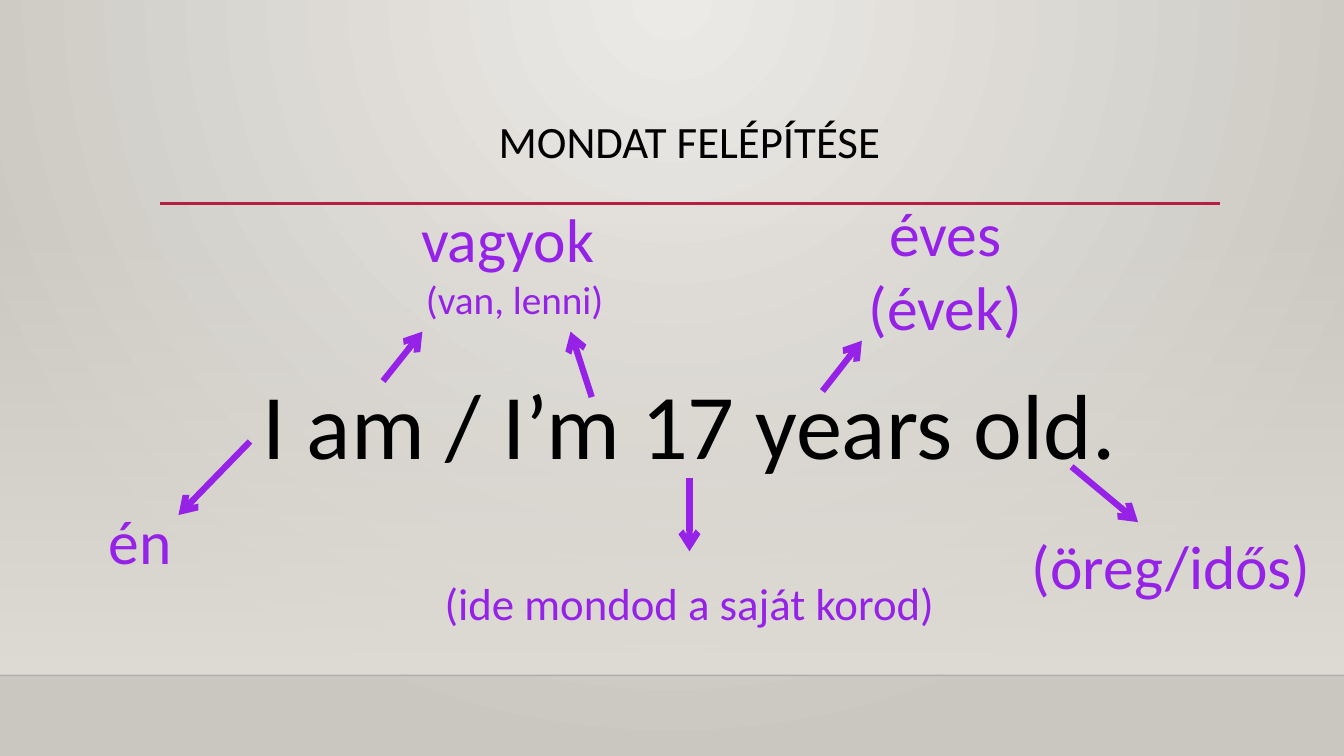
from dataclasses import dataclass

from lxml import etree
from pptx import Presentation
from pptx.dml.color import RGBColor
from pptx.enum.shapes import MSO_CONNECTOR, MSO_SHAPE
from pptx.enum.text import MSO_ANCHOR, PP_ALIGN
from pptx.oxml.ns import qn
from pptx.util import Inches, Pt

STRAIGHT = MSO_CONNECTOR.STRAIGHT
RECTANGLE = MSO_SHAPE.RECTANGLE
MIDDLE = MSO_ANCHOR.MIDDLE
CENTER = PP_ALIGN.CENTER
TITLE_ONLY = 5
WIDTH, HEIGHT = Inches(13.333), Inches(7.5)


@dataclass(frozen=True)
class Theme:
    font: str = "Calibri"
    ink: str = "000000"
    note: str = "9622E7"
    rule: str = "B71E42"
    floor: str = "000001"
    glow: str = "ECEAE7"
    edge: str = "CAC7C1"
    wall: str = "DFDBD5"
    sentence_size: int = 66
    word_size: int = 44
    title_size: int = 32
    hint_size: int = 28
    arrow_width: float = 4.5


THEME = Theme()

# Boxes are left, top, width, height in percent of the slide.
TITLE_BOX = (11.93, 10.8, 78.75, 16.4)
SENTENCE_BOX = (11.93, 29.33, 78.75, 50.27)
WALL_BOX = (0, 29.47, 100, 59.87)
TRANSLATIONS = [
    ("én", (2.18, 65.87, 16.5, 11.2), [THEME.word_size]),
    ("vagyok \v(van, lenni)", (23.18, 25.87, 30.23, 17.47),
     [THEME.word_size, THEME.hint_size]),
    ("(ide mondod a saját korod)", (31.43, 75.47, 39.75, 8.53), [THEME.title_size]),
    ("éves (évek)", (60.3, 25.07, 20.1, 21.07), [THEME.word_size]),
    ("(öreg/idős)", (73.88, 69.07, 26.55, 11.2), [THEME.word_size]),
]
# Arrows run from the sentence to a translation: x, y, x, y in percent.
ARROWS = [
    (18.6, 58.4, 13.28, 68.13),
    (28.5, 50.4, 31.43, 43.87),
    (51.3, 63.2, 51.3, 72.93),
    (44.03, 52.53, 42.45, 43.87),
    (61.2, 51.73, 64.13, 45.07),
    (79.73, 61.73, 84.68, 69.07),
]


def share(values):
    """Turn alternating horizontal and vertical percentages into lengths."""
    return [round(value / 100 * (HEIGHT if index % 2 else WIDTH))
            for index, value in enumerate(values)]


def set_alpha(color_element, percent):
    etree.SubElement(color_element, qn("a:alpha"), val=str(percent * 1000))


def set_gradient(fill, colors):
    fill.gradient()
    for stop, color in zip(fill.gradient_stops, colors):
        stop.color.rgb = RGBColor.from_string(color)


def paint_background(slide):
    """Spread a round glow from the middle of the top edge."""
    set_gradient(slide.background.fill, (THEME.glow, THEME.edge))
    gradient = slide.element.xpath(".//p:bg//a:gradFill")[0]
    gradient.remove(gradient.find(qn("a:lin")))
    glow_path = etree.SubElement(gradient, qn("a:path"), path="circle")
    etree.SubElement(glow_path, qn("a:fillToRect"),
                     l="43000", t="0", r="43000", b="100000")


def add_wall(slide):
    wall = slide.shapes.add_shape(RECTANGLE, *share(WALL_BOX))
    wall.shadow.inherit = False
    wall.line.fill.background()
    set_gradient(wall.fill, (THEME.wall, THEME.wall))
    wall.fill.gradient_angle = 270
    set_alpha(wall.element.spPr.xpath(".//a:gs/a:srgbClr")[0], 0)


def add_line(slide, ends, color, width):
    line = slide.shapes.add_connector(STRAIGHT, *share(ends))
    line.line.color.rgb = RGBColor.from_string(color)
    line.line.width = Pt(width)
    etree.SubElement(line.element.spPr, qn("a:effectLst"))
    return line


def add_arrow(slide, ends):
    arrow = add_line(slide, ends, THEME.note, THEME.arrow_width)
    outline = arrow.element.spPr.find(qn("a:ln"))
    etree.SubElement(outline, qn("a:tailEnd"), type="arrow")


def write_text(shape, text, sizes, color, spacing=1.0):
    """Fill a shape with one centred paragraph, one size for each line."""
    frame = shape.text_frame
    frame.word_wrap = True
    frame.vertical_anchor = MIDDLE
    paragraph = frame.paragraphs[0]
    paragraph.text = text
    paragraph.alignment = CENTER
    paragraph.line_spacing = spacing
    for run, size in zip(paragraph.runs, sizes):
        run.font.name = THEME.font
        run.font.size = Pt(size)
        run.font.color.rgb = RGBColor.from_string(color)


def add_title(slide, text):
    title = slide.shapes.title
    title.left, title.top, title.width, title.height = share(TITLE_BOX)
    write_text(title, text, [THEME.title_size], THEME.ink, 0.9)


def add_text(slide, text, box, sizes, color, spacing=1.0):
    text_box = slide.shapes.add_textbox(*share(box))
    write_text(text_box, text, sizes, color, spacing)


def main():
    presentation = Presentation()
    presentation.slide_width, presentation.slide_height = WIDTH, HEIGHT
    slide = presentation.slides.add_slide(presentation.slide_layouts[TITLE_ONLY])

    paint_background(slide)
    add_wall(slide)
    floor = add_line(slide, (0, 89.33, 100, 89.33), THEME.floor, 1)
    set_alpha(floor.element.spPr.xpath("./a:ln//a:srgbClr")[0], 20)
    add_line(slide, (11.93, 26.93, 90.75, 26.93), THEME.rule, 2.5)

    add_title(slide, "MONDAT FELÉPÍTÉSE")
    add_text(slide, "I am / I’m 17 years old.", SENTENCE_BOX,
             [THEME.sentence_size], THEME.ink, 1.2)
    for text, box, sizes in TRANSLATIONS:
        add_text(slide, text, box, sizes, THEME.note)
    for ends in ARROWS:
        add_arrow(slide, ends)

    presentation.save("out.pptx")


if __name__ == "__main__":
    main()
